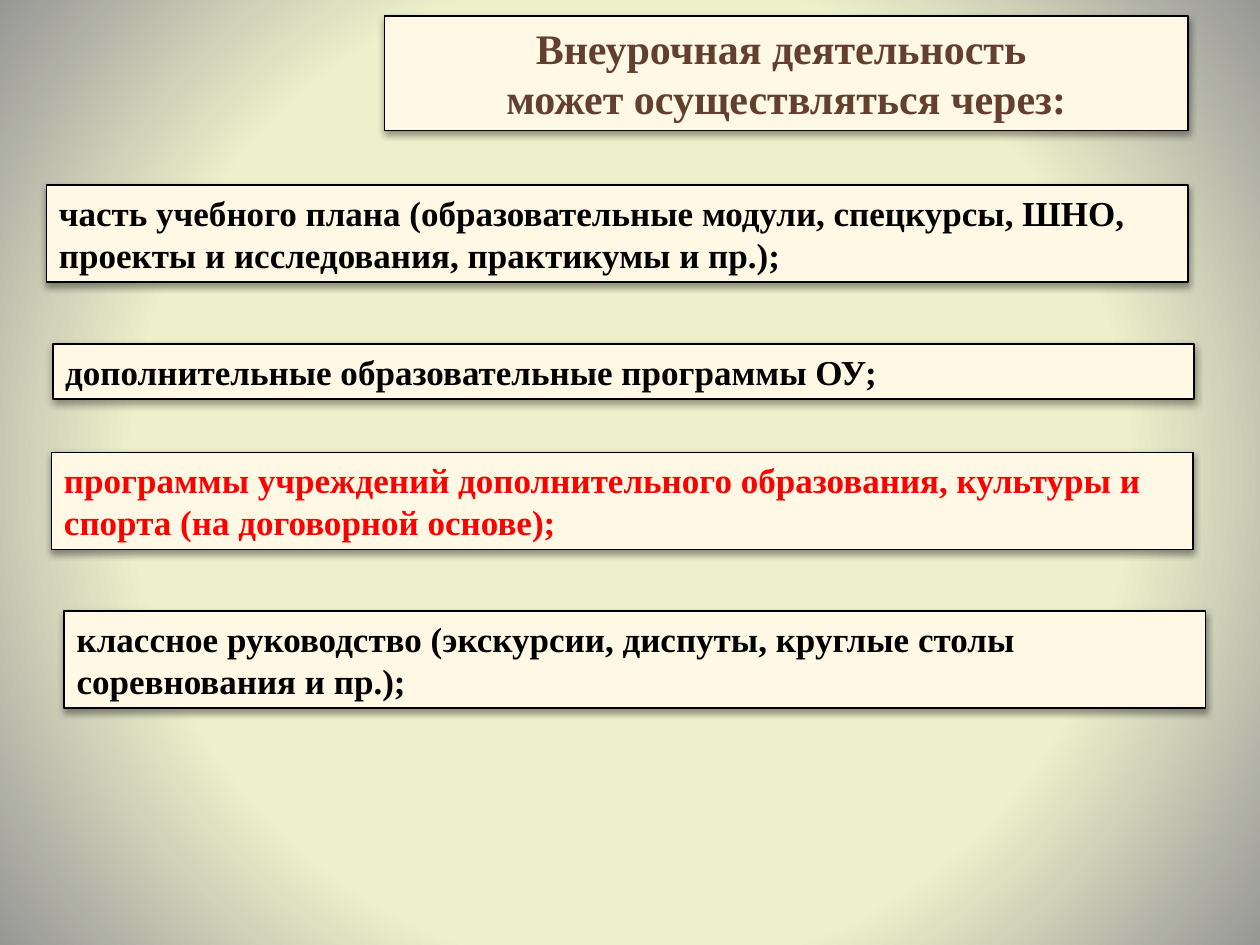
import pptx
import pptx.dml.color
import pptx.enum.shapes
import pptx.enum.text
import pptx.oxml
import pptx.oxml.ns
import pptx.util

Pt = pptx.util.Pt
ALIGN = pptx.enum.text.PP_ALIGN
NAMESPACES = pptx.oxml.ns.nsdecls("a", "p")

FONT = "Times New Roman"
CREAM, BLACK, RED, BROWN = "FEF8E4", "000000", "FF0000", "633F32"
WAY_WIDTH = 652.3
ONE_LINE, TWO_LINES = 31.5, 55.5

TITLE = ["Внеурочная деятельность ", "может осуществляться через:"]
# left, top, height, colour, wording
WAYS = [
    (26.6, 105.8, TWO_LINES, BLACK,
     "часть учебного плана (образовательные модули, спецкурсы, ШНО, "
     "проекты и исследования, практикумы и пр.);"),
    (30.2, 196.6, ONE_LINE, BLACK,
     "дополнительные образовательные программы ОУ;"),
    (29.5, 258.5, TWO_LINES, RED,
     "программы учреждений дополнительного образования, культуры и "
     "спорта (на договорной основе);"),
    (36.7, 349.2, TWO_LINES, BLACK,
     "классное руководство (экскурсии, диспуты, круглые столы "
     "соревнования и пр.);"),
]


def rgb(value):
    return pptx.dml.color.RGBColor.from_string(value)


def paint_background(slide):
    """Fill the slide with a circular gradient, light in the centre."""
    background = pptx.oxml.parse_xml(
        f'<p:bg {NAMESPACES}><p:bgPr><a:gradFill rotWithShape="1"><a:gsLst>'
        '<a:gs pos="0"><a:srgbClr val="EDF0CA"/></a:gs>'
        '<a:gs pos="63000"><a:srgbClr val="EDF0CA"/></a:gs>'
        '<a:gs pos="100000"><a:srgbClr val="979797"/></a:gs></a:gsLst>'
        '<a:path path="circle">'
        '<a:fillToRect l="50000" t="50000" r="50000" b="50000"/></a:path>'
        '</a:gradFill><a:effectLst/></p:bgPr></p:bg>')
    slide.element.cSld.insert(0, background)


def add_soft_shadow(shape):
    shape.shadow.inherit = False
    effects = shape.element.spPr.find(pptx.oxml.ns.qn("a:effectLst"))
    effects.append(pptx.oxml.parse_xml(
        f'<a:outerShdw {NAMESPACES} blurRad="{Pt(4)}" dist="{Pt(2)}" '
        'dir="5400000" rotWithShape="0"><a:srgbClr val="000000">'
        '<a:alpha val="38000"/></a:srgbClr></a:outerShdw>'))


def add_panel(slide, left, top, width, height, lines, size, color, align):
    panel = slide.shapes.add_shape(
        pptx.enum.shapes.MSO_SHAPE.RECTANGLE,
        Pt(left), Pt(top), Pt(width), Pt(height))
    panel.fill.solid()
    panel.fill.fore_color.rgb = rgb(CREAM)
    panel.line.color.rgb = rgb(BLACK)
    panel.line.width = Pt(0.9)
    add_soft_shadow(panel)

    frame = panel.text_frame
    frame.word_wrap = True
    frame.auto_size = pptx.enum.text.MSO_AUTO_SIZE.SHAPE_TO_FIT_TEXT
    frame.vertical_anchor = pptx.enum.text.MSO_ANCHOR.TOP
    for index, line in enumerate(lines):
        paragraph = frame.add_paragraph() if index else frame.paragraphs[0]
        paragraph.alignment = align
        run = paragraph.add_run()
        run.text = line
        run.font.name = FONT
        run.font.size = Pt(size)
        run.font.bold = True
        run.font.color.rgb = rgb(color)


def main():
    presentation = pptx.Presentation()
    presentation.slide_width, presentation.slide_height = Pt(720), Pt(540)
    slide = presentation.slides.add_slide(presentation.slide_layouts[6])
    paint_background(slide)
    add_panel(slide, 219.6, 9.2, 459.4, 65.4, TITLE, 24, BROWN, ALIGN.CENTER)
    for left, top, height, color, wording in WAYS:
        add_panel(slide, left, top, WAY_WIDTH, height, [wording], 20, color,
                  ALIGN.LEFT)
    presentation.save("out.pptx")


if __name__ == "__main__":
    main()
